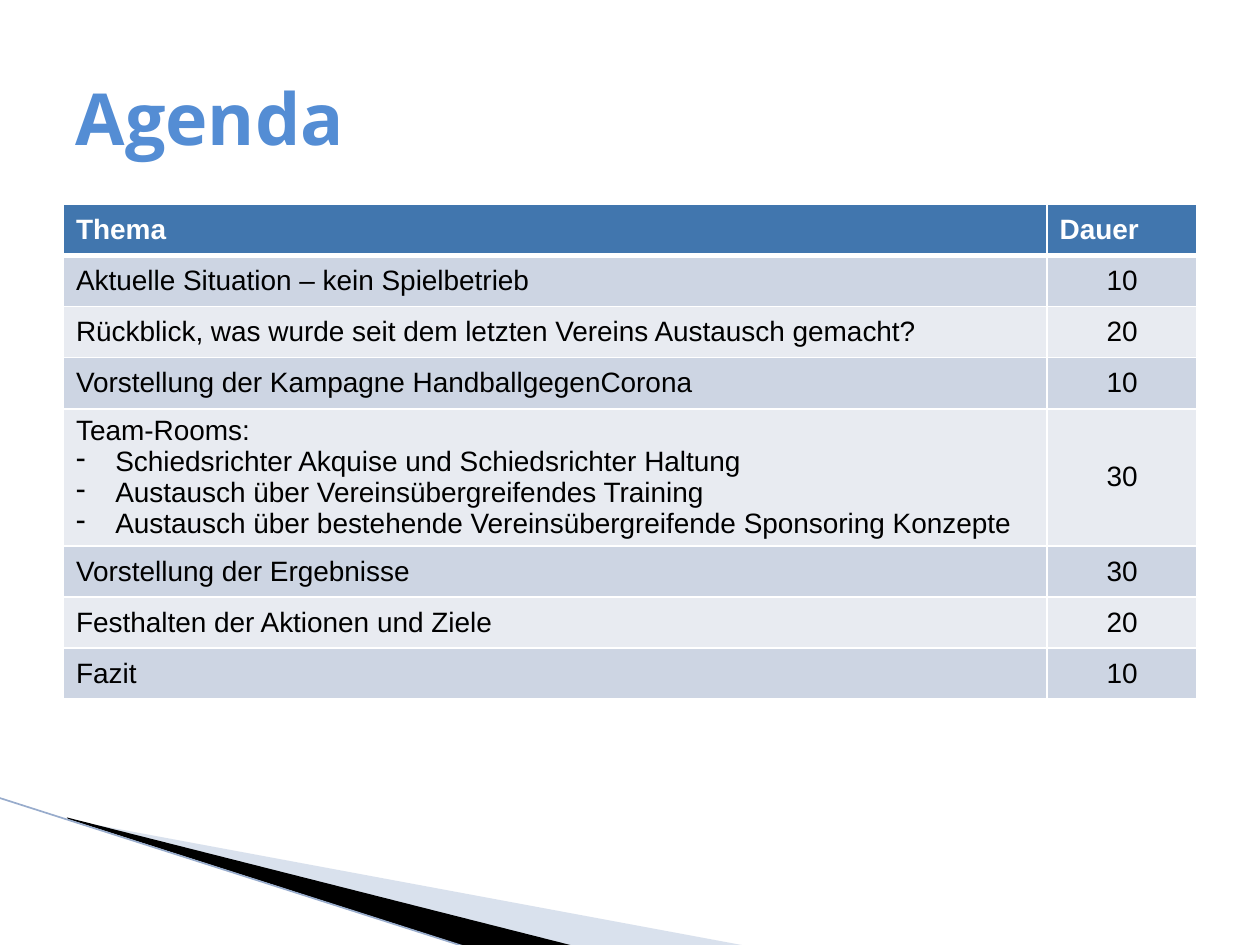
from lxml import etree
from pptx import Presentation
from pptx.dml.color import RGBColor
from pptx.enum.shapes import MSO_CONNECTOR
from pptx.enum.text import MSO_ANCHOR, PP_ALIGN
from pptx.oxml import parse_xml
from pptx.oxml.ns import nsdecls, qn
from pptx.util import Cm, Pt

STRAIGHT = MSO_CONNECTOR.STRAIGHT
MIDDLE = MSO_ANCHOR.MIDDLE
LEFT = PP_ALIGN.LEFT
CENTER = PP_ALIGN.CENTER

AGENDA = [
    (["Aktuelle Situation – kein Spielbetrieb"], "10"),
    (["Rückblick, was wurde seit dem letzten Vereins Austausch gemacht?"], "20"),
    (["Vorstellung der Kampagne HandballgegenCorona"], "10"),
    (["Team-Rooms:",
      "Schiedsrichter Akquise und Schiedsrichter Haltung",
      "Austausch über Vereinsübergreifendes Training",
      "Austausch über bestehende Vereinsübergreifende Sponsoring Konzepte"], "30"),
    (["Vorstellung der Ergebnisse"], "30"),
    (["Festhalten der Aktionen und Ziele"], "20"),
    (["Fazit"], "10"),
]


def color(value):
    return RGBColor.from_string(value)


class AgendaPage:
    title_font = "Open Sans"
    body_font = "Arial"
    title_color = "548DD4"
    header_fill = "4176AE"
    band_fills = ("CDD5E3", "E8EBF1")
    row_height = 1.03
    line_height = 0.625

    def __init__(self, deck):
        self.page = deck.slides.add_slide(deck.slide_layouts[5])

    def add_text(self, para, text, font, size, tint, bold=False, align=LEFT):
        para.alignment = align
        span = para.add_run()
        span.text = text
        span.font.name = font
        span.font.size = Pt(size)
        span.font.bold = bold
        span.font.color.rgb = color(tint)

    def wedge(self, points, fill, opacity=100):
        corners = [(Cm(x), Cm(y)) for x, y in points]
        builder = self.page.shapes.build_freeform(*corners[0], scale=1.0)
        builder.add_line_segments(corners[1:], close=True)
        shape = builder.convert_to_shape()
        shape.shadow.inherit = False
        shape.fill.solid()
        shape.fill.fore_color.rgb = color(fill)
        shape.line.fill.background()
        if opacity < 100:
            tint = shape._element.spPr.find(".//" + qn("a:srgbClr"))
            etree.SubElement(tint, qn("a:alpha")).set("val", str(opacity * 1000))

    def line(self, start, end, tint, width):
        ends = [Cm(value) for value in (*start, *end)]
        connector = self.page.shapes.add_connector(STRAIGHT, *ends)
        connector.line.color.rgb = color(tint)
        connector.line.width = Pt(width)
        etree.SubElement(connector._element.spPr, qn("a:effectLst"))

    def title(self, text, left, top, width, height):
        box = self.page.shapes.title
        box.left, box.top, box.width, box.height = map(Cm, (left, top, width, height))
        box.text_frame.vertical_anchor = MIDDLE
        self.add_text(box.text_frame.paragraphs[0], text, self.title_font, 41,
                      self.title_color, True)

    def dash(self, para):
        properties = para._p.get_or_add_pPr()
        properties.set("marL", str(Cm(0.79)))
        properties.set("indent", str(-Cm(0.79)))
        etree.SubElement(properties, qn("a:buChar")).set("char", "-")

    def borders(self, cell, top, bottom):
        properties = cell._tc.get_or_add_tcPr()
        for side, width in (("L", 1), ("R", 1), ("T", top), ("B", bottom)):
            properties.append(parse_xml(
                f'<a:ln{side} {nsdecls("a")} w="{Pt(width)}"><a:solidFill>'
                f'<a:srgbClr val="FFFFFF"/></a:solidFill></a:ln{side}>'))

    def cell(self, cell, lines, row, align):
        header = row == 0
        self.borders(cell, 3 if row == 1 else 1, 3 if header else 1)
        cell.fill.solid()
        fill = self.header_fill if header else self.band_fills[(row - 1) % 2]
        cell.fill.fore_color.rgb = color(fill)
        cell.vertical_anchor = MIDDLE
        frame = cell.text_frame
        for index, text in enumerate(lines):
            para = frame.add_paragraph() if index else frame.paragraphs[0]
            if index:
                self.dash(para)
            self.add_text(para, text, self.body_font, 16,
                          "FFFFFF" if header else "000000", header, align)

    def table(self, header, entries, left, top, widths):
        heights = [self.row_height] + [
            self.row_height if len(lines) == 1 else 0.25 + self.line_height * len(lines)
            for lines, _ in entries]
        frame = self.page.shapes.add_table(
            len(heights), len(widths), Cm(left), Cm(top), Cm(sum(widths)), Cm(sum(heights)))
        table = frame.table
        for column, width in zip(table.columns, widths):
            column.width = Cm(width)
        for row, (lines, minutes) in enumerate([header, *entries]):
            table.rows[row].height = Cm(heights[row])
            self.cell(table.cell(row, 0), lines, row, LEFT)
            self.cell(table.cell(row, 1), [minutes], row, CENTER if row else LEFT)


def main():
    deck = Presentation()
    deck.slide_width, deck.slide_height = Cm(25.4), Cm(19.05)
    agenda = AgendaPage(deck)
    agenda.wedge([(1.4, 16.53), (15.11, 19.08), (11.58, 19.08), (1.4, 16.51)], "A1B4D2", 40)
    agenda.wedge([(1.35, 16.48), (11.61, 19.08), (9.45, 19.1), (1.37, 16.51)], "000000")
    agenda.line((-0.03, 16.08), (9.42, 19.1), "98ACCC", 0.95)
    agenda.title("Agenda", 1.27, 0.76, 22.86, 3.18)
    agenda.table((["Thema"], "Dauer"), AGENDA, 1.28, 4.12, (19.83, 3.02))
    deck.save("out.pptx")


if __name__ == "__main__":
    main()
